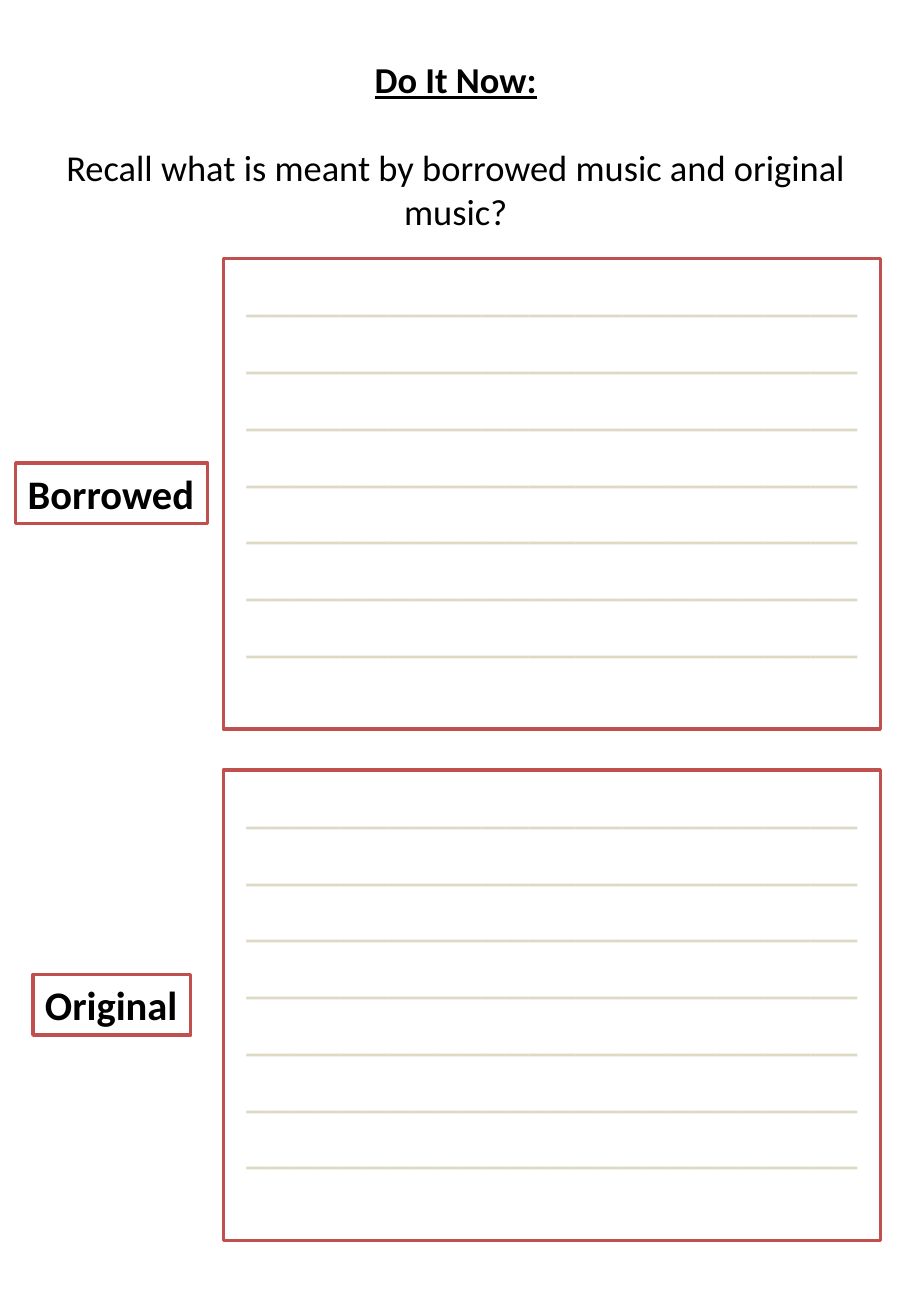
from pptx import Presentation
from pptx.dml.color import RGBColor
from pptx.enum.shapes import MSO_SHAPE as Shape
from pptx.enum.text import MSO_ANCHOR as Anchor, PP_ALIGN as Align
from pptx.util import Cm, Pt


def paint(color, hue):
    color.rgb = RGBColor.from_string(hue)


def write(para, text, size, hue, bold=False, line=False):
    run = para.add_run()
    run.text = text
    font = run.font
    font.name, font.size = "Calibri", Pt(size)
    font.bold, font.underline = bold, line
    paint(font.color, hue)


deck = Presentation()
deck.slide_width, deck.slide_height = Cm(19.05), Cm(27.51)
slide = deck.slides.add_slide(deck.slide_layouts[6])

# Title and task
title = slide.shapes.add_textbox(Cm(1.02), Cm(1.57), Cm(17.02), Cm(2.92))
frame = title.text_frame
frame.word_wrap = True
frame.vertical_anchor = Anchor.MIDDLE
head = frame.paragraphs[0]
head.alignment = Align.CENTER
write(head, "Do It Now:", 21.6, "000000", bold=True, line=True)
task = frame.add_paragraph()
task.alignment = Align.CENTER
task.space_before = Pt(26)
write(task, "Recall what is meant by borrowed music and original music?",
      21.6, "000000")

# Each section: a label beside a box of writing lines
rule = "_" * 26
sections = [("Borrowed", 0.33, 4.01, 5.41), ("Original", 0.69, 3.3, 16.1)]
for name, left, width, top in sections:
    parts = [
        (left, top + 4.27, width, 1.27, [name], 24, "000000", Align.LEFT),
        (4.67, top, 13.74, 9.83, [rule, rule * 6], 28, "DDD9C3", Align.CENTER),
    ]
    for x, y, w, h, texts, size, hue, align in parts:
        box = slide.shapes.add_shape(
            Shape.RECTANGLE, Cm(x), Cm(y), Cm(w), Cm(h))
        box.shadow.inherit = False
        box.fill.solid()
        paint(box.fill.fore_color, "FFFFFF")
        paint(box.line.color, "C0504D")
        box.line.width = Pt(2)
        frame = box.text_frame
        frame.word_wrap = align == Align.CENTER
        frame.vertical_anchor = Anchor.TOP
        for i, text in enumerate(texts):
            para = frame.add_paragraph() if i else frame.paragraphs[0]
            para.alignment = align
            write(para, text, size, hue, bold=text == name)

deck.save("out.pptx")
